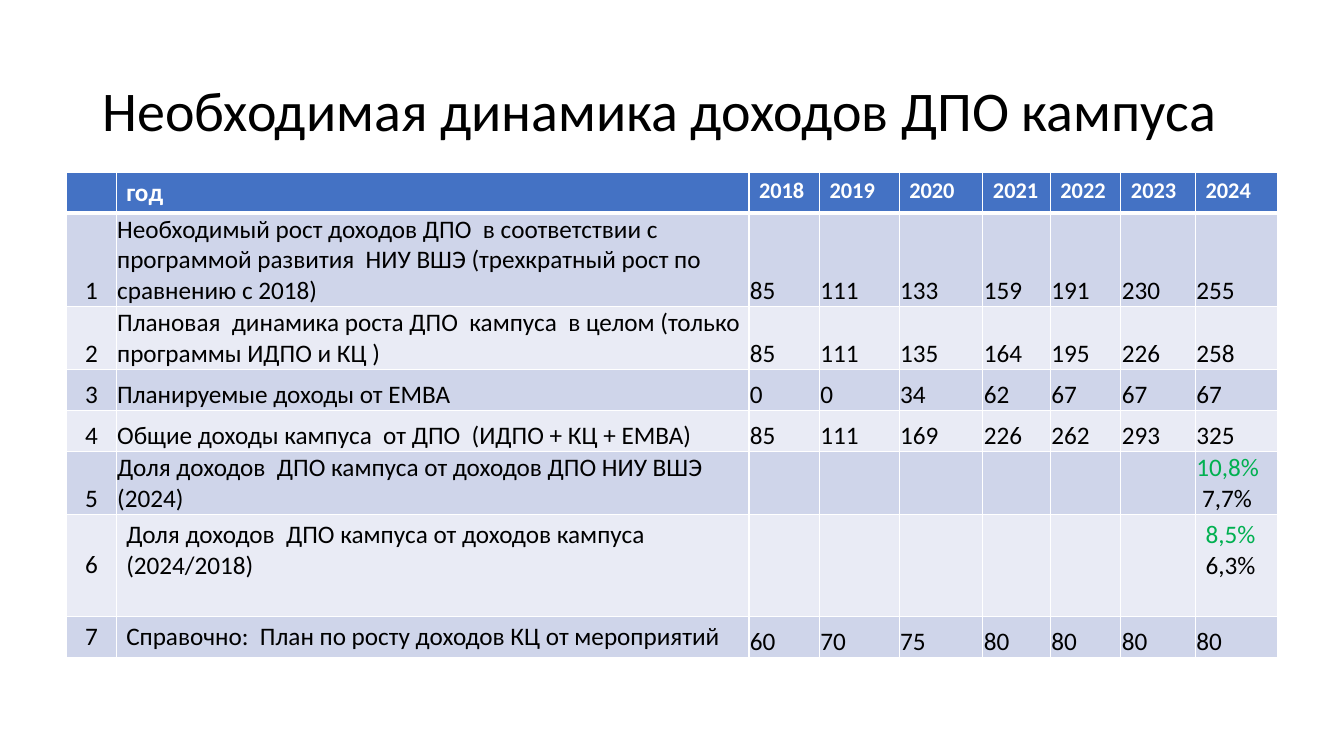
from lxml.etree import SubElement
from pptx import Presentation
from pptx.dml.color import RGBColor
from pptx.enum.text import MSO_ANCHOR, MSO_AUTO_SIZE, PP_ALIGN
from pptx.oxml.ns import qn
from pptx.util import Pt

BLACK = RGBColor(0x00, 0x00, 0x00)
WHITE = RGBColor(0xFF, 0xFF, 0xFF)
GREEN = RGBColor(0x00, 0xB0, 0x50)
HEADER_BLUE = RGBColor(0x44, 0x72, 0xC4)
BAND_DARK = RGBColor(0xCF, 0xD5, 0xEA)
BAND_LIGHT = RGBColor(0xE9, 0xEB, 0xF5)
FONT = "Calibri"

TITLE = "Необходимая динамика доходов ДПО кампуса"
YEARS = ["2018", "2019", "2020", "2021", "2022", "2023", "2024"]
# Each indicator: name, yearly values; a tuple holds target above actual share
INDICATORS = [
    ("Необходимый рост доходов ДПО  в соответствии с программой развития  НИУ ВШЭ "
     "(трехкратный рост по сравнению с 2018)",
     ["85", "111", "133", "159", "191", "230", "255"]),
    ("Плановая  динамика роста ДПО  кампуса  в целом (только программы ИДПО и КЦ )",
     ["85", "111", "135", "164", "195", "226", "258"]),
    ("Планируемые доходы от EMBA",
     ["0", "0", "34", "62", "67", "67", "67"]),
    ("Общие доходы кампуса  от ДПО  (ИДПО + КЦ + EMBA)",
     ["85", "111", "169", "226", "262", "293", "325"]),
    ("Доля доходов  ДПО кампуса от доходов ДПО НИУ ВШЭ (2024)",
     [""] * 6 + [("10,8%", " 7,7%")]),
    ("Доля доходов  ДПО кампуса от доходов кампуса (2024/2018)",
     [""] * 6 + [("8,5%", "6,3%")]),
    ("Справочно:  План по росту доходов КЦ от мероприятий",
     ["60", "70", "75", "80", "80", "80", "80"]),
]
COLUMN_WIDTHS = [35.3, 452, 50.4, 56.9, 59.8, 48.2, 50.4, 53.3, 59]
ROW_HEIGHTS = [29.2, 66.5, 45, 29.2, 29.2, 45, 73, 29.2]
SHARE_OF_CAMPUS, REFERENCE = 6, 7  # rows with roomier cells


def add_line(paragraph, words, size, color, bold=False):
    run = paragraph.add_run()
    run.text = words
    run.font.name = FONT
    run.font.size = Pt(size)
    run.font.bold = bold
    run.font.color.rgb = color


def draw_borders(cell, row):
    """White rules on all sides, thicker below the header."""
    widths = {"a:lnL": 1, "a:lnR": 1,
              "a:lnT": 3 if row == 1 else 1, "a:lnB": 3 if row == 0 else 1}
    properties = cell._tc.get_or_add_tcPr()
    for side, width in widths.items():
        line = SubElement(properties, qn(side), w=str(Pt(width)))
        fill = SubElement(line, qn("a:solidFill"))
        SubElement(fill, qn("a:srgbClr"), val=str(WHITE))


def fill_cell(cell, content, row, column):
    draw_borders(cell, row)
    cell.fill.solid()
    cell.fill.fore_color.rgb = (HEADER_BLUE if row == 0
                                else BAND_DARK if row % 2 else BAND_LIGHT)
    frame = cell.text_frame
    if not content:
        frame.paragraphs[0].font.size = Pt(18)
        return

    roomy = row in (0, SHARE_OF_CAMPUS) or (row == REFERENCE and column < 2)
    if not roomy:
        cell.vertical_anchor = MSO_ANCHOR.BOTTOM
        cell.margin_left = cell.margin_right = cell.margin_top = Pt(0.7)
        cell.margin_bottom = Pt(0)
    elif row == SHARE_OF_CAMPUS and column == 0:
        cell.vertical_anchor = MSO_ANCHOR.MIDDLE

    first = frame.paragraphs[0]
    if isinstance(content, tuple):
        target, actual = content
        add_line(first, target, 18, GREEN)
        add_line(frame.add_paragraph(), actual, 18, BLACK)
    elif row == 0:
        add_line(first, content, 18 if column == 1 else 16, WHITE, True)
    else:
        add_line(first, content, 18, BLACK)
        first.alignment = PP_ALIGN.CENTER if column == 0 else PP_ALIGN.LEFT


def main():
    deck = Presentation()
    deck.slide_width, deck.slide_height = Pt(960), Pt(540)
    slide = deck.slides.add_slide(deck.slide_layouts[5])

    title = slide.shapes.title
    title.left, title.top, title.width, title.height = Pt(66), Pt(28.8), Pt(828), Pt(104.4)
    title.text_frame.auto_size = MSO_AUTO_SIZE.NONE
    title.text_frame.vertical_anchor = MSO_ANCHOR.MIDDLE
    heading = title.text_frame.paragraphs[0]
    heading.alignment = PP_ALIGN.LEFT
    heading.line_spacing = 0.9
    add_line(heading, TITLE, 40, BLACK)

    rows = [["", "год", *YEARS]]
    rows += [[str(number), name, *values]
             for number, (name, values) in enumerate(INDICATORS, 1)]
    income = slide.shapes.add_table(
        len(rows), len(COLUMN_WIDTHS), Pt(47.7), Pt(123.1),
        Pt(sum(COLUMN_WIDTHS)), Pt(sum(ROW_HEIGHTS))).table
    for column, width in zip(income.columns, COLUMN_WIDTHS):
        column.width = Pt(width)
    for row, height in zip(income.rows, ROW_HEIGHTS):
        row.height = Pt(height)
    for r, contents in enumerate(rows):
        for c, content in enumerate(contents):
            fill_cell(income.cell(r, c), content, r, c)

    deck.save("out.pptx")


if __name__ == "__main__":
    main()
